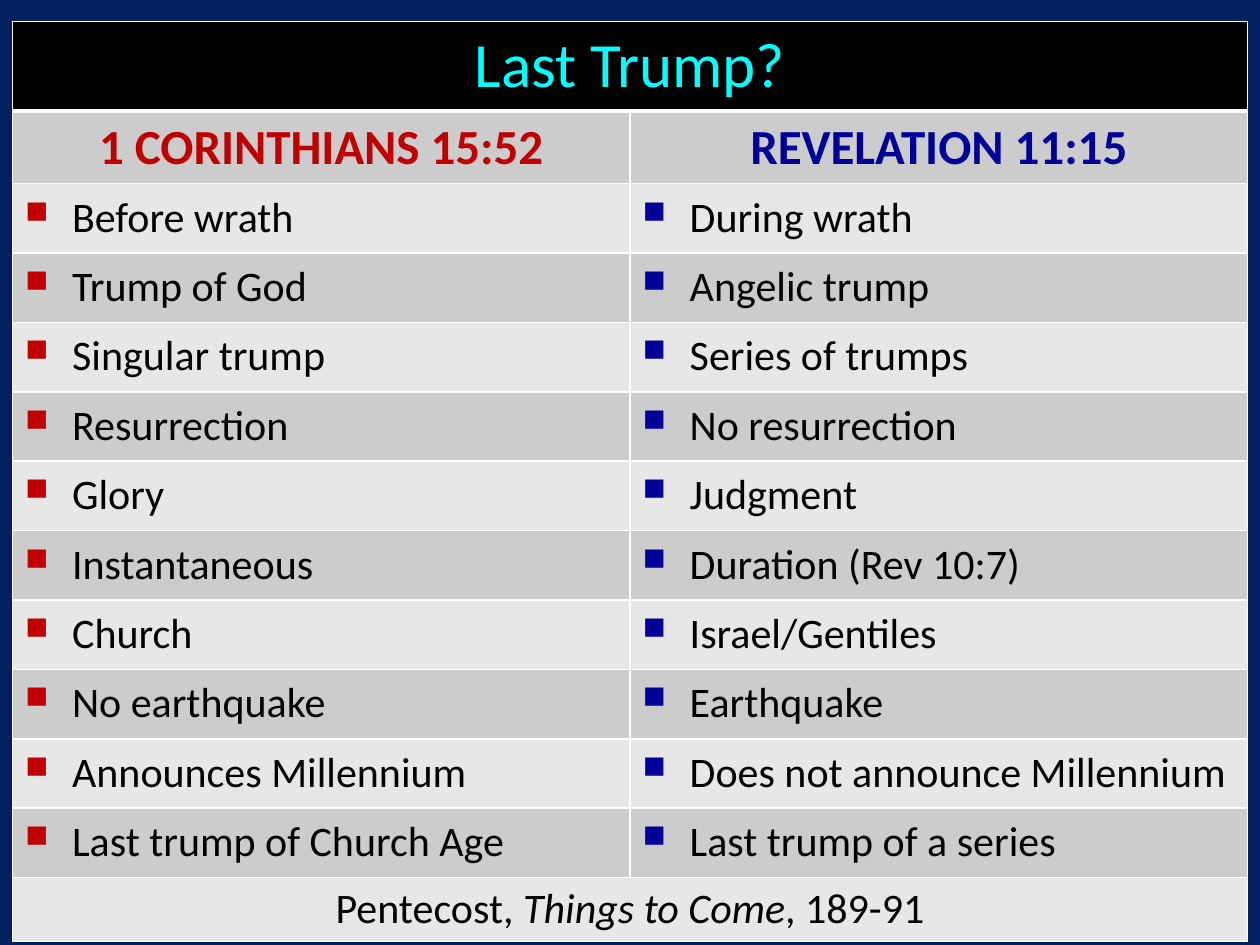
from lxml.etree import SubElement
from pptx import Presentation
from pptx.dml.color import RGBColor
from pptx.enum.text import MSO_ANCHOR, PP_ALIGN
from pptx.oxml.ns import qn
from pptx.util import Cm, Pt

# Content
TITLE = "Last Trump?"
HEADS = ["1 CORINTHIANS 15:52", "REVELATION 11:15"]
PAIRS = [
    ("Before wrath", "During wrath"),
    ("Trump of God", "Angelic trump"),
    ("Singular trump", "Series of trumps"),
    ("Resurrection", "No resurrection"),
    ("Glory", "Judgment"),
    ("Instantaneous", "Duration (Rev 10:7)"),
    ("Church", "Israel/Gentiles"),
    ("No earthquake", "Earthquake"),
    ("Announces Millennium", "Does not announce Millennium"),
    ("Last trump of Church Age", "Last trump of a series"),
]
SOURCE = [("Pentecost, ", False), ("Things to Come", True), (", 189-91", False)]

# Look
COLORS = {"back": "002060", "title": "00FFFF", "bar": "000000", "text": "000000",
          "dark": "CCCCCC", "light": "E7E7E7", "rule": "FFFFFF"}
SIDES = ["C00000", "000099"]
LAST = len(PAIRS) + 2
HEIGHTS = [1.04, 1.45] + [1.4] * len(PAIRS) + [1.04]
WIDTH = 12.45


def write(par, text, color, **form):
    run = par.add_run()
    run.text = text
    run.font.color.rgb = RGBColor.from_string(color)
    for key, val in {"name": "Calibri", **form}.items():
        setattr(run.font, key, val)


def rule(cell, edge, width):
    line = SubElement(cell._tc.get_or_add_tcPr(), qn(f"a:ln{edge}"), w=str(Pt(width)))
    fill = SubElement(line, qn("a:solidFill"))
    SubElement(fill, qn("a:srgbClr"), val=COLORS["rule"])


def bullet(par, color):
    par.line_spacing = 0.9
    props = par._p.get_or_add_pPr()
    props.set("marL", str(Cm(0.95)))
    props.set("indent", str(-Cm(0.95)))
    before = SubElement(props, qn("a:spcBef"))
    SubElement(before, qn("a:spcPct"), val="20000")
    tint = SubElement(props, qn("a:buClr"))
    SubElement(tint, qn("a:srgbClr"), val=color)
    SubElement(props, qn("a:buSzPct"), val="75000")
    SubElement(props, qn("a:buChar"), char="■")


# Slide
deck = Presentation()
deck.slide_width, deck.slide_height = Cm(25.4), Cm(19.05)
slide = deck.slides.add_slide(deck.slide_layouts[6])
slide.background.fill.solid()
slide.background.fill.fore_color.rgb = RGBColor.from_string(COLORS["back"])

# Table grid
table = slide.shapes.add_table(len(HEIGHTS), 2, Cm(0.25), Cm(0.43),
                               Cm(2 * WIDTH), Cm(18.21)).table
for col in table.columns:
    col.width = Cm(WIDTH)
for row, height in zip(table.rows, HEIGHTS):
    row.height = Cm(height)

# Cell rules and fills, with a thick rule under the title
for r in range(len(HEIGHTS)):
    shade = "bar" if r == 0 else "dark" if r % 2 else "light"
    for c in range(2):
        cell = table.cell(r, c)
        for edge in "LRTB":
            rule(cell, edge, 3 if (r, edge) in [(0, "B"), (1, "T")] else 1)
        cell.fill.solid()
        cell.fill.fore_color.rgb = RGBColor.from_string(COLORS[shade])
        cell.vertical_anchor = MSO_ANCHOR.MIDDLE
for r in (0, LAST):
    table.cell(r, 0).merge(table.cell(r, 1))


def first(r, c=0, align=PP_ALIGN.CENTER):
    par = table.cell(r, c).text_frame.paragraphs[0]
    par.alignment = align
    return par


# Title and source rows
write(first(0), TITLE, COLORS["title"], size=Pt(36), bold=False)
par = first(LAST)
for text, slant in SOURCE:
    write(par, text, COLORS["text"], size=Pt(24), bold=False, italic=slant)

# Two columns of contrasts
for c, color in enumerate(SIDES):
    write(first(1, c), HEADS[c], color, size=Pt(28), bold=True)
    for r, pair in enumerate(PAIRS, 2):
        par = first(r, c, PP_ALIGN.LEFT)
        bullet(par, color)
        write(par, pair[c], COLORS["text"], size=Pt(24), bold=False)

deck.save("out.pptx")
